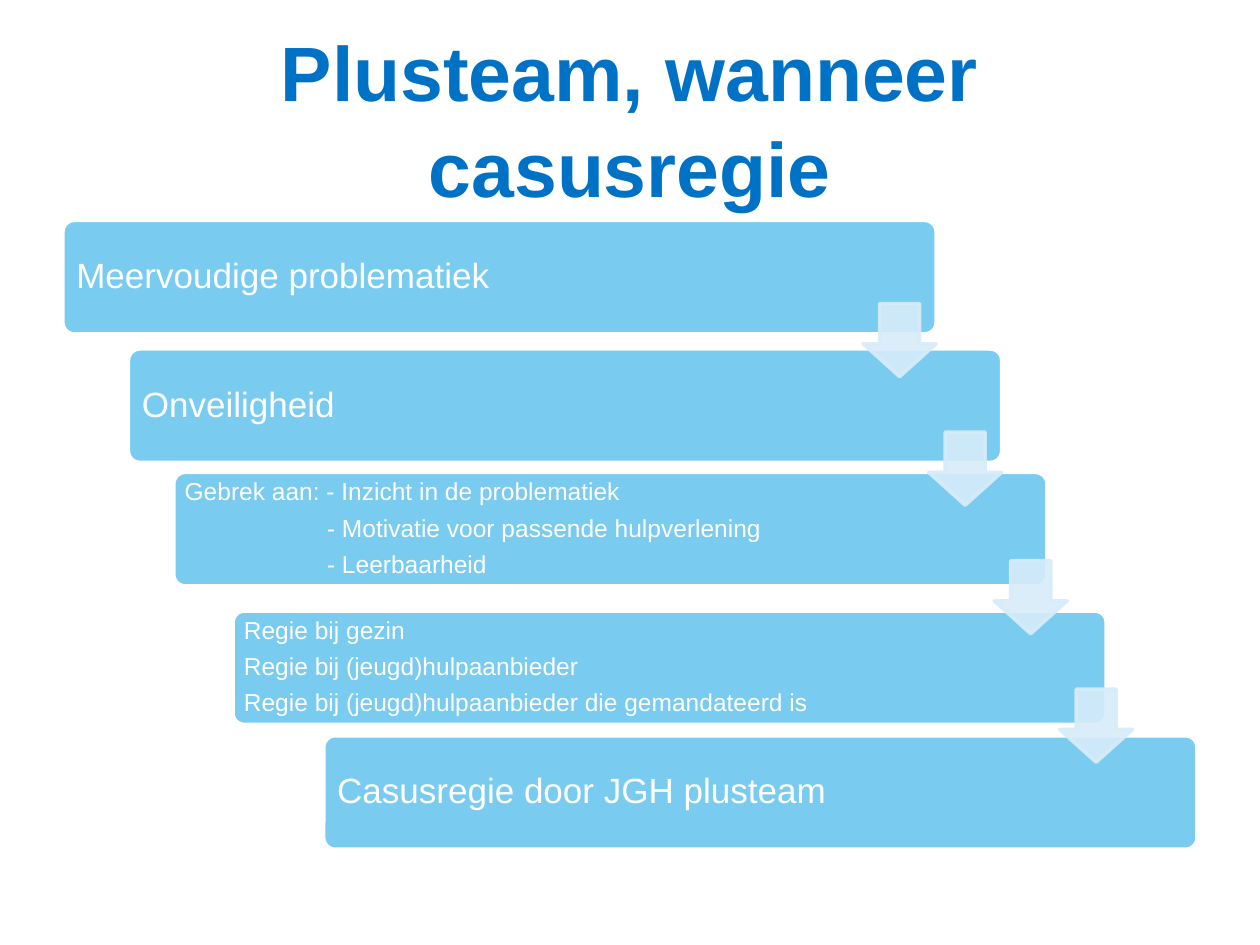
from lxml.etree import SubElement
from pptx import Presentation
from pptx.dml.color import RGBColor
from pptx.enum.shapes import MSO_SHAPE as Shape
from pptx.enum.text import MSO_ANCHOR as Anchor, PP_ALIGN as Align
from pptx.oxml.ns import qn
from pptx.util import Inches, Pt

COLORS = {"title": "0072C6", "step": "79CBF0", "arrow": "D7ECF9", "white": "FFFFFF"}
FONT = "Arial"
TITLE_ONLY = 5
HANGING_INDENT = 1.13

STEPS = [
    (0.5, 1.75, 20, ["Meervoudige problematiek"]),
    (1.02, 2.77, 20, ["Onveiligheid"]),
    (1.38, 3.75, 14, [
        "Gebrek aan: - Inzicht in de problematiek",
        ("- Motivatie voor passende hulpverlening", HANGING_INDENT),
        ("- Leerbaarheid", HANGING_INDENT),
    ]),
    (1.85, 4.85, 14, [
        "Regie bij gezin",
        "Regie bij (jeugd)hulpaanbieder",
        "Regie bij (jeugd)hulpaanbieder die gemandateerd is",
    ]),
    (2.57, 5.84, 20, ["Casusregie door JGH plusteam"]),
]


def color(name):
    return RGBColor.from_string(COLORS[name])


def write_text(frame, lines, size, fill, bold=False, align=Align.LEFT,
               line_spacing=0.9, space_after=0, inset=0.1):
    frame.word_wrap = True
    frame.vertical_anchor = Anchor.MIDDLE
    frame.margin_left = frame.margin_right = Inches(inset)
    frame.margin_top = frame.margin_bottom = Inches(min(inset, 0.05))
    for index, line in enumerate(lines):
        text, indent = line if isinstance(line, tuple) else (line, 0)
        paragraph = frame.paragraphs[0] if index == 0 else frame.add_paragraph()
        paragraph.alignment = align
        paragraph.line_spacing = line_spacing
        paragraph.space_after = Pt(space_after)
        if indent:
            paragraph._p.get_or_add_pPr().set("marL", str(Inches(indent)))
        run = paragraph.add_run()
        run.text = text
        run.font.name = FONT
        run.font.size = Pt(size)
        run.font.bold = bold
        run.font.color.rgb = color(fill)


class SlideBuilder:
    def __init__(self, presentation):
        self.slide = presentation.slides.add_slide(presentation.slide_layouts[TITLE_ONLY])

    def title(self, text):
        title = self.slide.shapes.title
        title.left, title.top = Inches(0.5), Inches(0.3)
        title.width, title.height = Inches(9), Inches(1.25)
        write_text(title.text_frame, [text], 44, "title", bold=True,
                   align=Align.CENTER, line_spacing=1.04)

    def block(self, kind, left, top, width, height, fill, line, adjustments):
        shape = self.slide.shapes.add_shape(
            kind, Inches(left), Inches(top), Inches(width), Inches(height))
        shape.shadow.inherit = False
        shape.fill.solid()
        shape.fill.fore_color.rgb = color(fill)
        shape.line.color.rgb = color(line)
        shape.line.width = Pt(2)
        for index, value in enumerate(adjustments):
            shape.adjustments[index] = value
        return shape

    def step(self, left, top, size, lines):
        shape = self.block(Shape.ROUNDED_RECTANGLE, left, top, 6.93, 0.9,
                           "step", "white", [0.1])
        write_text(shape.text_frame, lines, size, "white",
                   space_after=round(size * 0.4, 1), inset=0.08 if size == 20 else 0.06)

    def arrow(self, left, top):
        shape = self.block(Shape.DOWN_ARROW, left, top, 0.58, 0.58,
                           "arrow", "arrow", [0.55, 0.45])
        for tint in shape._element.spPr.iter(qn("a:srgbClr")):
            SubElement(tint, qn("a:alpha"), val="90000")


def main():
    presentation = Presentation()
    presentation.slide_width, presentation.slide_height = Inches(10), Inches(7.5)
    builder = SlideBuilder(presentation)
    builder.title("Plusteam, wanneer casusregie")
    for step in STEPS:
        builder.step(*step)
    for index in range(len(STEPS) - 1):
        builder.arrow(6.85 + 0.52 * index, 2.41 + 1.02 * index)
    presentation.save("out.pptx")


if __name__ == "__main__":
    main()
